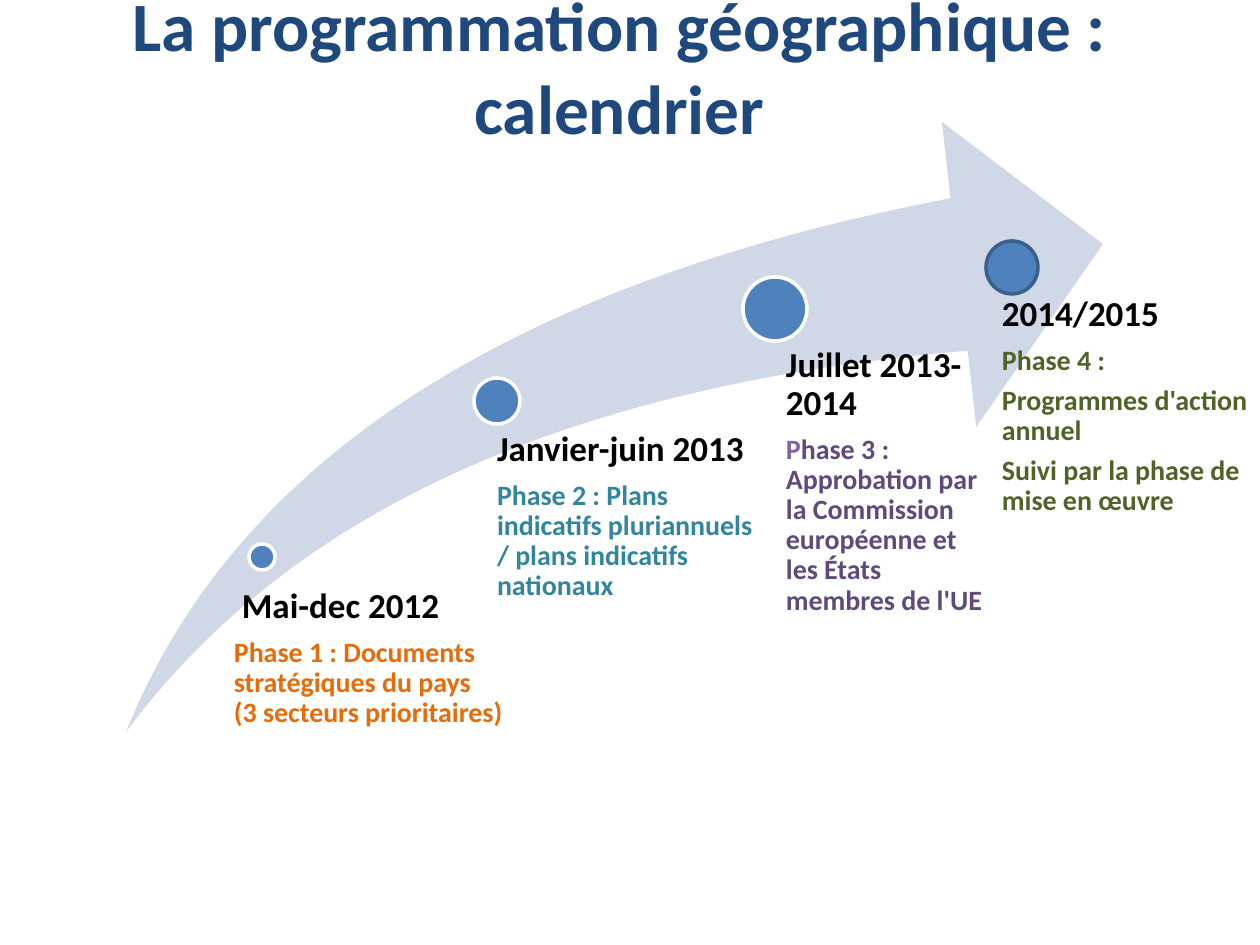
from copy import deepcopy
from pptx import Presentation
from pptx.dml.color import RGBColor
from pptx.enum.shapes import MSO_SHAPE
from pptx.enum.text import MSO_ANCHOR, MSO_AUTO_SIZE, PP_ALIGN
from pptx.oxml.ns import qn
from pptx.util import Pt

NAVY = RGBColor(0x1F, 0x49, 0x7D)
PALE = RGBColor(0xD0, 0xD8, 0xE8)
BLUE = RGBColor(0x4F, 0x81, 0xBD)
DARK_BLUE = RGBColor(0x3A, 0x5F, 0x8C)
WHITE = RGBColor(0xFF, 0xFF, 0xFF)
BLACK = RGBColor(0, 0, 0)
ORANGE = RGBColor(0xE4, 0x6C, 0x0A)
TEAL = RGBColor(0x31, 0x85, 0x9C)
LILAC = RGBColor(0x80, 0x64, 0xA2)
PURPLE = RGBColor(0x60, 0x4A, 0x7B)
GREEN = RGBColor(0x4F, 0x62, 0x28)

MILESTONES = [
    ((249, 544, 26, 26), WHITE, (220, 588, 313, 176), 14, " Mai-dec 2012",
     [[("Phase 1 : Documents stratégiques du pays\v(3 secteurs prioritaires)", ORANGE)]]),
    ((474, 378, 46, 46), WHITE, (473, 431, 284, 331), 24, "Janvier-juin 2013",
     [[("Phase 2 : Plans indicatifs pluriannuels / plans indicatifs nationaux", TEAL)]]),
    ((743, 277, 64, 64), WHITE, (752, 347, 234, 425), 34, "Juillet 2013-2014",
     [[("P", LILAC),
       ("hase 3 : Approbation par la Commission européenne et les États membres de l'UE", PURPLE)]]),
    ((986, 241, 52, 53), DARK_BLUE, (968, 296, 295, 425), 34, "2014/2015",
     [[("Phase 4 :", GREEN)],
      [("Programmes d'action annuel", GREEN)],
      [("Suivi par la phase de mise en œuvre", GREEN)]]),
]


def px(n):
    return round(n * 914400 / 126)


class Deck:
    """Holds the slide and the style shared by its elements."""

    font = "Calibri"

    def __init__(self):
        self.prs = Presentation()
        self.prs.slide_width, self.prs.slide_height = px(1260), px(945)
        self.s = self.prs.slides.add_slide(self.prs.slide_layouts[5])

    def style(self, r, size, color):
        r.font.name, r.font.size, r.font.bold = self.font, Pt(size), True
        r.font.color.rgb = color

    def title(self, box, text, size, color):
        sp = self.s.shapes.title
        sp.left, sp.top, sp.width, sp.height = map(px, box)
        tf = sp.text_frame
        tf.text = text
        tf.auto_size, tf.vertical_anchor = MSO_AUTO_SIZE.NONE, MSO_ANCHOR.MIDDLE
        p = tf.paragraphs[0]
        p.alignment = PP_ALIGN.CENTER
        self.style(p.runs[0], size, color)

    def shape(self, kind, box, fill, line=None):
        sp = self.s.shapes.add_shape(kind, *map(px, box))
        sp.shadow.inherit = False
        sp.fill.solid()
        sp.fill.fore_color.rgb = fill
        if line is None:
            sp.line.fill.background()
        else:
            sp.line.color.rgb, sp.line.width = line, Pt(2)
        return sp

    def paragraph(self, p, parts, size):
        p.line_spacing, p.space_after = 0.9, Pt(0.35 * size)
        p.text = parts[0][0]
        for r in p.runs:
            self.style(r, size, parts[0][1])
        for br in p._p.findall(qn("a:br")):
            br.append(deepcopy(p.runs[0]._r.rPr))
        for text, color in parts[1:]:
            r = p.add_run()
            r.text = text
            self.style(r, size, color)

    def label(self, box, inset, heading, phases):
        tf = self.s.shapes.add_textbox(*map(px, box)).text_frame
        tf.word_wrap = True
        tf.margin_left = px(inset)
        tf.margin_top = tf.margin_right = tf.margin_bottom = 0
        self.paragraph(tf.paragraphs[0], [(heading, BLACK)], 20)
        for parts in phases:
            self.paragraph(tf.add_paragraph(), parts, 16)


def main():
    deck = Deck()
    deck.title((21, 10, 1197, 110), "La programmation géographique : calendrier", 39.6, NAVY)
    arrow = deck.shape(MSO_SHAPE.SWOOSH_ARROW, (126, 122, 977, 610), PALE)
    arrow.adjustments[0] = arrow.adjustments[1] = 0.25
    for dot, outline, box, inset, heading, phases in MILESTONES:
        deck.shape(MSO_SHAPE.OVAL, dot, BLUE, outline)
        deck.label(box, inset, heading, phases)
    deck.prs.save("out.pptx")


if __name__ == "__main__":
    main()
